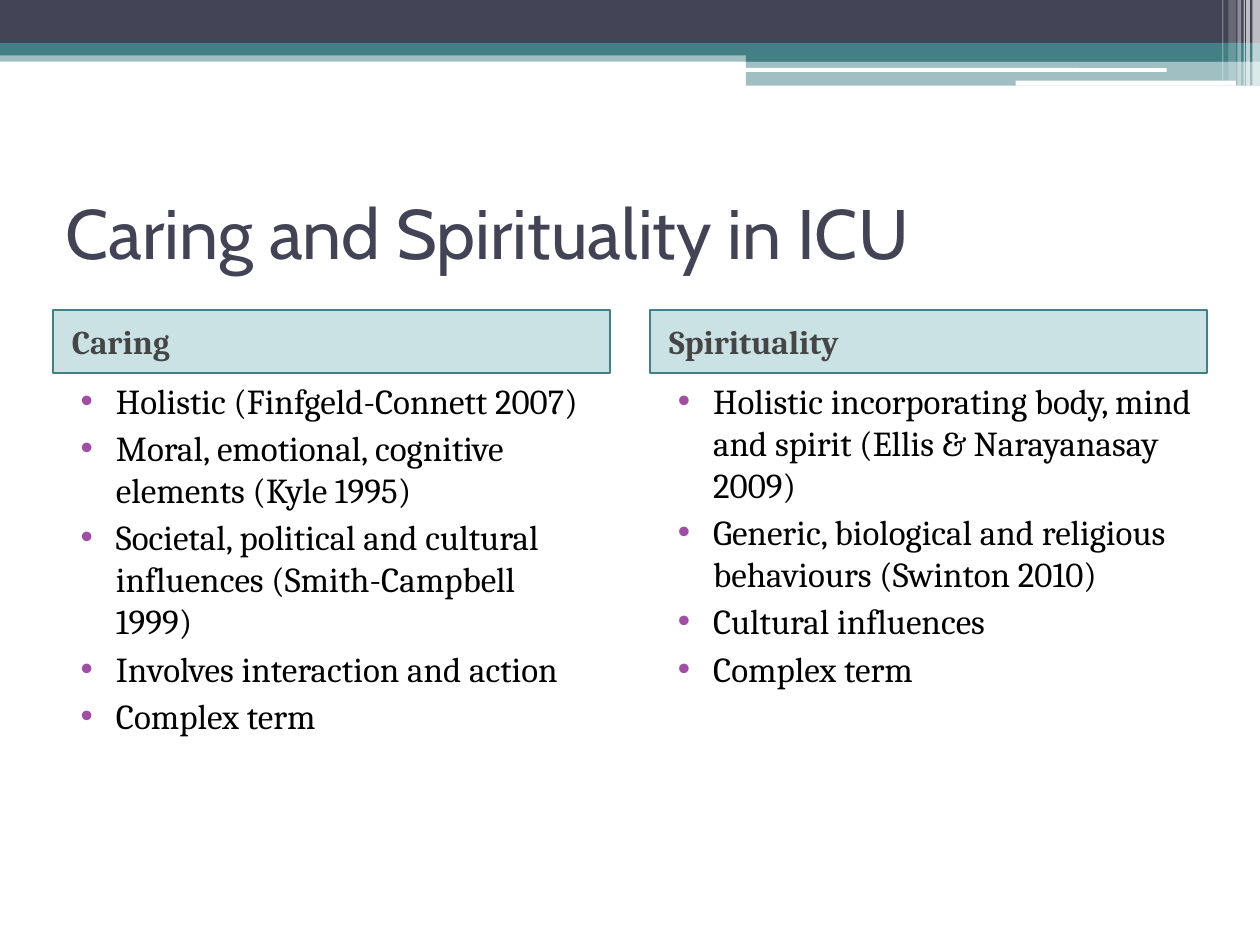
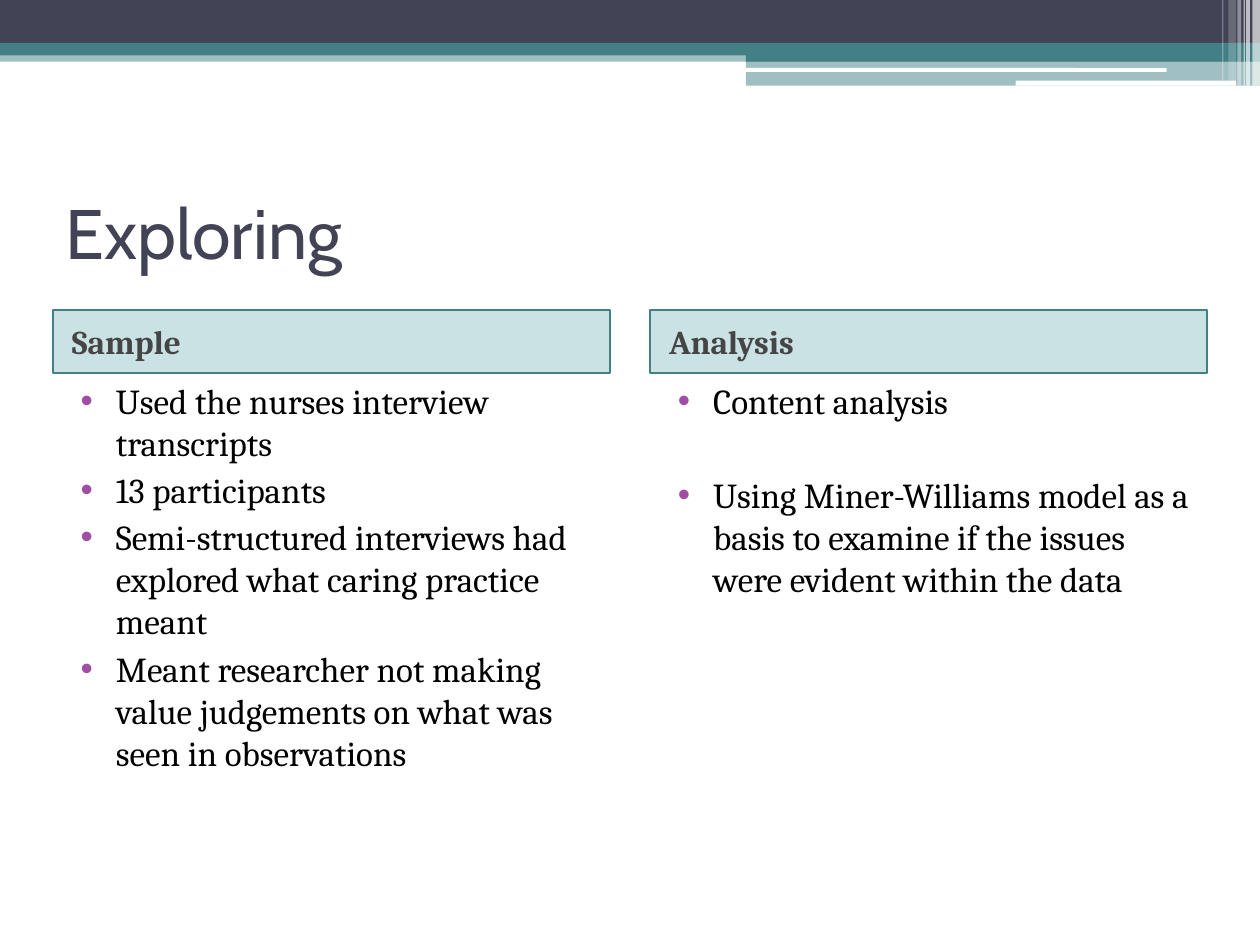
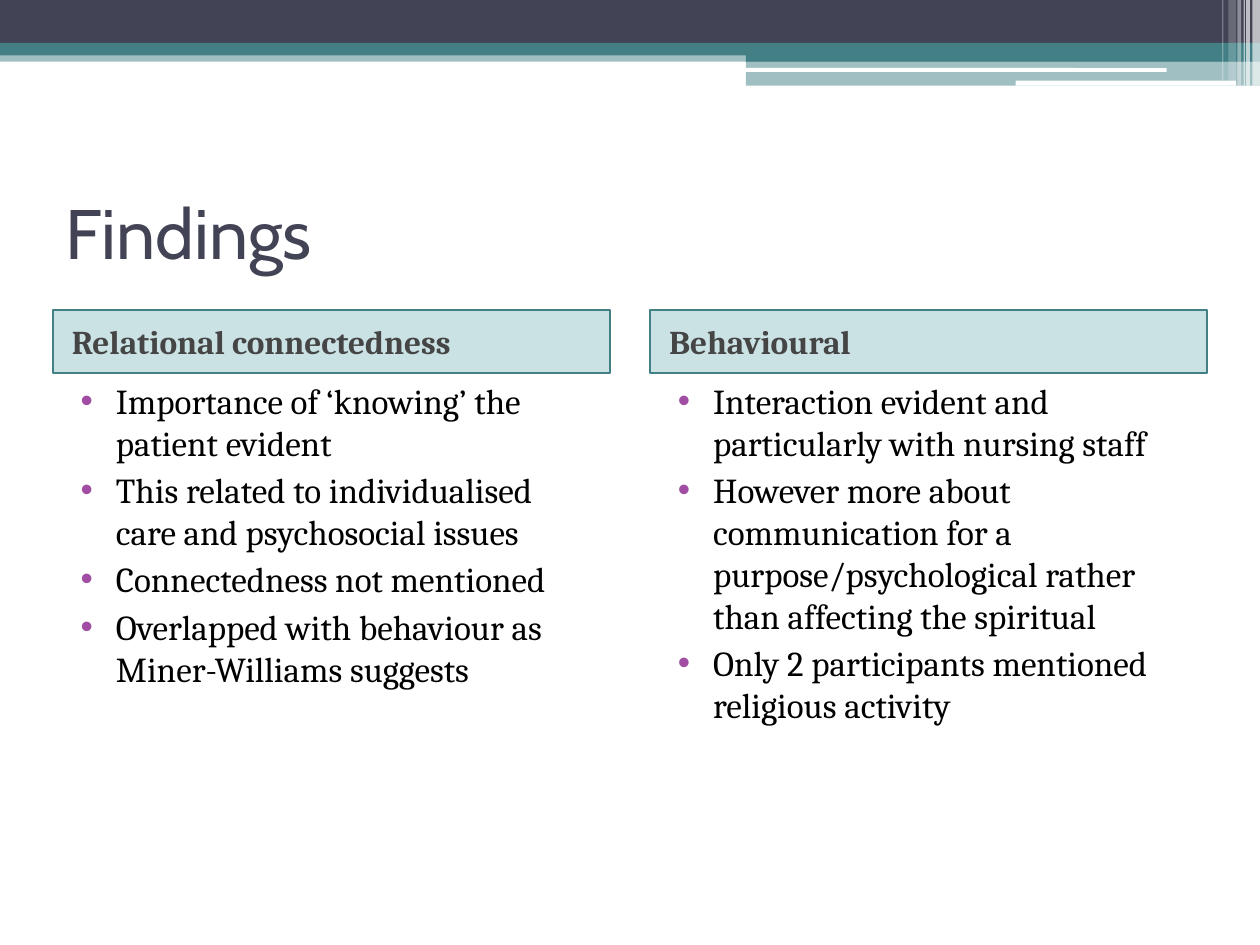
from lxml import etree
from pptx import Presentation
from pptx.dml.color import RGBColor
from pptx.enum.shapes import MSO_SHAPE
from pptx.enum.text import MSO_ANCHOR, MSO_AUTO_SIZE, PP_ALIGN
from pptx.oxml.ns import qn
from pptx.util import Pt

PX = 9144  # 100 px to the inch
RECT, ROUNDED = MSO_SHAPE.RECTANGLE, MSO_SHAPE.ROUNDED_RECTANGLE
MIDDLE, TOP = MSO_ANCHOR.MIDDLE, MSO_ANCHOR.TOP
NO_AUTOFIT = MSO_AUTO_SIZE.NONE
LEFT = PP_ALIGN.LEFT

SLATE = RGBColor(0x42, 0x44, 0x56)
TEAL = RGBColor(0x43, 0x80, 0x86)
HEADING_FILL = RGBColor(0x32, 0x8E, 0x97)
HEADING_TEXT = RGBColor(0x45, 0x45, 0x45)
PURPLE = RGBColor(0xA0, 0x4D, 0xA3)
BLACK = RGBColor(0, 0, 0)
WHITE = RGBColor(0xFF, 0xFF, 0xFF)

TITLE_FONT, BODY_FONT = "Cabin", "Cambria"
COLUMN_LEFTS, COLUMN_WIDTH = (42, 516), 442

# Banner parts from back to front: shape, left, top, width, height, colour, opacity %
BANNER = [
    (RECT, 0, 40, 1000, 9, TEAL, 50),
    (RECT, 0, 0, 1000, 34, SLATE, 100),
    (RECT, 0, 34, 1000, 10, TEAL, 100),
    (RECT, 592, 39, 408, 10, TEAL, 100),
    (RECT, 592, 48, 408, 20, TEAL, 50),
    (ROUNDED, 591, 54, 335, 3, WHITE, 100),
    (ROUNDED, 806, 64, 175, 4, WHITE, 100),
    (RECT, 994, 0, 6, 68, WHITE, 65),
    (RECT, 989, 0, 3, 68, WHITE, 65),
    (RECT, 987, 0, 1, 68, WHITE, 60),
    (RECT, 982, 0, 3, 68, WHITE, 40),
    (RECT, 975, 0, 6, 64, WHITE, 20),
    (RECT, 970, 0, 1, 64, WHITE, 30),
]

# Title, then (heading, bullets, space before each bullet in points) per column
SLIDES = [
    ("Caring and Spirituality in ICU", [
        ("Caring", [
            "Holistic (Finfgeld-Connett 2007)",
            "Moral, emotional, cognitive elements (Kyle 1995)",
            "Societal, political and cultural influences (Smith-Campbell 1999)",
            "Involves interaction and action",
            "Complex term"], 3),
        ("Spirituality", [
            "Holistic incorporating body, mind and spirit (Ellis & Narayanasay 2009)",
            "Generic, biological and religious behaviours (Swinton 2010)",
            "Cultural influences",
            "Complex term"], 3),
    ]),
    ("Exploring", [
        ("Sample", [
            "Used the nurses interview transcripts",
            "13 participants",
            "Semi-structured interviews had explored what caring practice meant",
            "Meant researcher not making value judgements on what was seen in observations"], 3),
        ("Analysis", [
            "Content analysis",
            "Using Miner-Williams model as a basis to examine if the issues "
            "were evident within the data"], 30),
    ]),
    ("Findings", [
        ("Relational connectedness", [
            "Importance of ‘knowing’ the patient evident",
            "This related to individualised care and psychosocial issues",
            "Connectedness not mentioned",
            "Overlapped with behaviour as Miner-Williams suggests"], 3),
        ("Behavioural", [
            "Interaction evident and particularly with nursing staff",
            "However more about communication for a purpose/psychological rather "
            "than affecting the spiritual",
            "Only 2 participants mentioned religious activity"], 3),
    ]),
]


def fill_shape(shape, colour, opacity):
    shape.fill.solid()
    shape.fill.fore_color.rgb = colour
    if opacity < 100:
        colour_node = shape.element.spPr.find(f"{qn('a:solidFill')}/{qn('a:srgbClr')}")
        etree.SubElement(colour_node, qn("a:alpha"), val=str(opacity * 1000))


def write_text(box, place, lines, anchor, font_name, size, colour, bold=False):
    box.left, box.top, box.width, box.height = (value * PX for value in place)
    frame = box.text_frame
    frame.text = "\n".join(lines)
    frame.word_wrap = True
    frame.auto_size = NO_AUTOFIT
    frame.vertical_anchor = anchor
    for para in frame.paragraphs:
        para.alignment = LEFT
        para.font.name = font_name
        para.font.size = Pt(size)
        para.font.color.rgb = colour
        para.font.bold = bold
    return frame.paragraphs


deck = Presentation()
deck.slide_width, deck.slide_height = 1000 * PX, 750 * PX
layout = deck.slide_layouts.get_by_name("Comparison")

for number, (title, columns) in enumerate(SLIDES):
    slide = deck.slides.add_slide(layout)

    # The banner is drawn once and moved into the shared layout
    if number == 0:
        for order, (kind, left, top, width, height, colour, opacity) in enumerate(BANNER):
            band = slide.shapes.add_shape(kind, left * PX, top * PX, width * PX, height * PX)
            band.shadow.inherit = False
            band.line.fill.background()
            fill_shape(band, colour, opacity)
            band.element.nvSpPr.cNvPr.set("id", str(100 + order))
            layout.shapes.element.insert(2 + order, band.element)

    # Title
    write_text(slide.shapes.title, (42, 125, 917, 117), [title], MIDDLE, TITLE_FONT, 40, SLATE)

    for column, (heading, bullets, gap) in enumerate(columns):
        left = COLUMN_LEFTS[column]
        heading_box = slide.placeholders[1 + 2 * column]
        list_box = slide.placeholders[2 + 2 * column]

        # Column heading
        fill_shape(heading_box, HEADING_FILL, 25)
        heading_box.line.color.rgb = TEAL
        heading_box.line.width = Pt(1)
        heading_para = write_text(heading_box, (left, 246, COLUMN_WIDTH, 50), [heading],
                                  MIDDLE, BODY_FONT, 19, HEADING_TEXT, True)[0]
        heading_para.space_before = Pt(3)
        heading_para._p.get_or_add_pPr().set("marL", str(5 * PX))

        # Bulleted list
        paras = write_text(list_box, (left, 296, COLUMN_WIDTH, 425), bullets,
                           TOP, BODY_FONT, 20, BLACK)
        for index, para in enumerate(paras):
            para.space_before = Pt(gap if index else 3)
            properties = para._p.get_or_add_pPr()
            properties.set("marL", str(40 * PX))
            properties.set("indent", str(-28 * PX))
            bullet_colour = etree.Element(qn("a:buClr"))
            etree.SubElement(bullet_colour, qn("a:srgbClr"), val=str(PURPLE))
            properties.find(qn("a:defRPr")).addprevious(bullet_colour)

deck.save("out.pptx")
